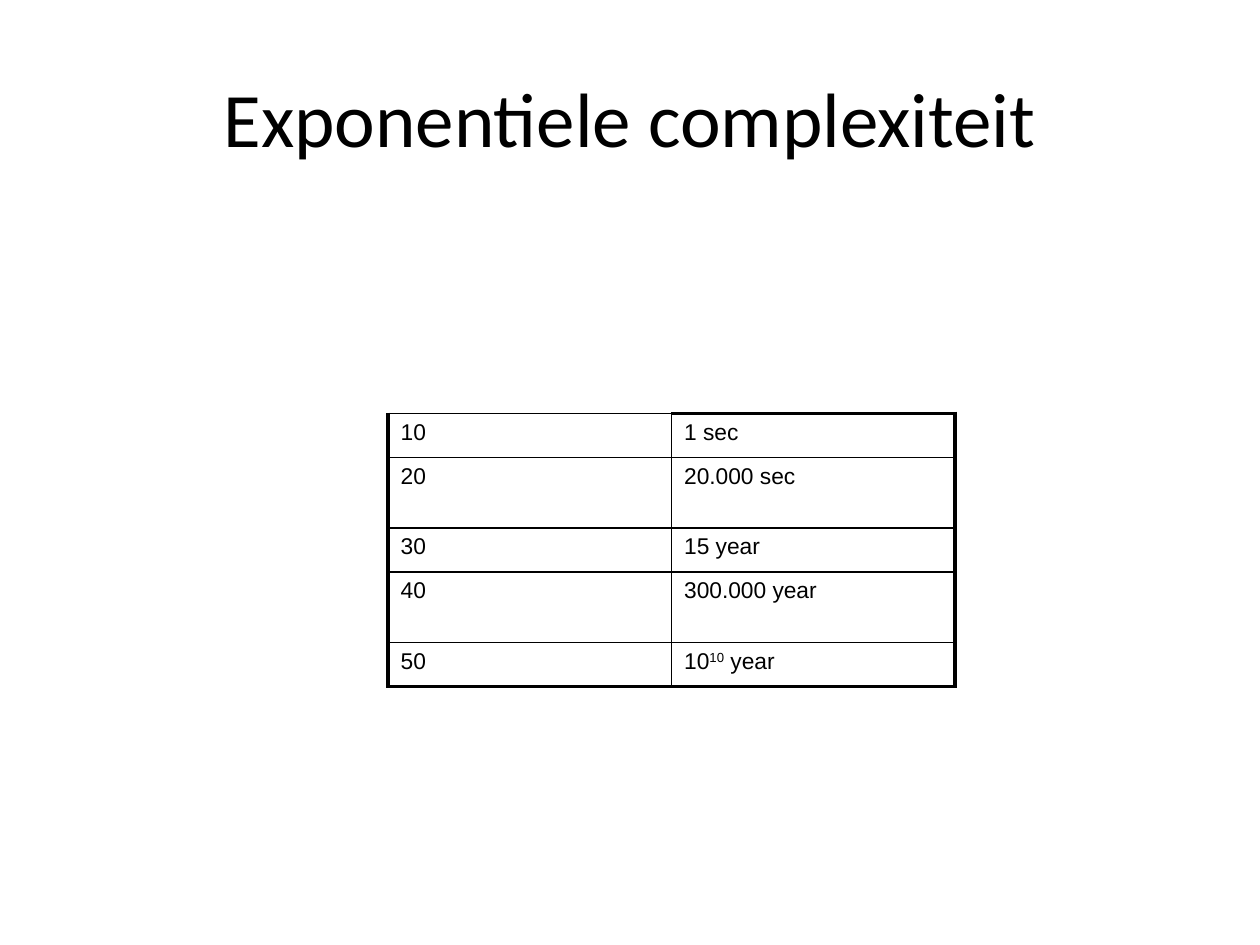
from lxml import etree
from pptx import Presentation
from pptx.dml.color import RGBColor
from pptx.enum.text import MSO_ANCHOR, PP_ALIGN
from pptx.oxml.ns import qn
from pptx.util import Inches, Pt

CENTER = PP_ALIGN.CENTER
MIDDLE = MSO_ANCHOR.MIDDLE
COLORS = {"black": "000000"}
THIN, THICK = 1, 2.25


def format_run(r, font, size):
    r.font.name = font
    r.font.size = Pt(size)
    r.font.color.rgb = RGBColor.from_string(COLORS["black"])


def add_border(cell, side, width):
    ln = etree.SubElement(cell._tc.get_or_add_tcPr(), qn(f"a:ln{side}"), w=str(Pt(width)))
    fill = etree.SubElement(ln, qn("a:solidFill"))
    etree.SubElement(fill, qn("a:srgbClr"), val=COLORS["black"])


prs = Presentation()
prs.slide_width = Inches(10)
prs.slide_height = Inches(7.5)
s = prs.slides.add_slide(prs.slide_layouts[6])

title = s.shapes.add_textbox(Inches(0.5), Inches(0.3), Inches(9), Inches(1.25))
tf = title.text_frame
tf.word_wrap = True
tf.vertical_anchor = MIDDLE
p = tf.paragraphs[0]
p.text = "Exponentiele complexiteit"
p.alignment = CENTER
format_run(p.runs[0], "Calibri", 44)

rows = [
    ("10", ["1 sec"], 0.35),
    ("20", ["20.000 sec"], 0.56),
    ("30", ["15 year"], 0.35),
    ("40", ["300.000 year"], 0.56),
    ("50", ["10", "10", " year"], 0.35),
]
last = len(rows) - 1
frame = s.shapes.add_table(len(rows), 2, Inches(3.08), Inches(3.28), Inches(4.5), Inches(2.17))
table = frame.table
table.first_row = False
table.horz_banding = False
for column in table.columns:
    column.width = Inches(2.25)

for i, (size, duration, height) in enumerate(rows):
    table.rows[i].height = Inches(height)
    for j, parts in enumerate(([size], duration)):
        cell = table.cell(i, j)
        p = cell.text_frame.paragraphs[0]
        for k, part in enumerate(parts):
            r = p.add_run()
            r.text = part
            format_run(r, "Arial", 13)
            if k == 1:
                r.font._element.set("baseline", "30000")
        add_border(cell, "L", THICK if j == 0 else THIN)
        add_border(cell, "R", THICK if j == 1 else THIN)
        add_border(cell, "T", THICK if i == 0 and j == 1 else THIN)
        add_border(cell, "B", THICK if i == last else THIN)
        cell.fill.background()

prs.save("out.pptx")
